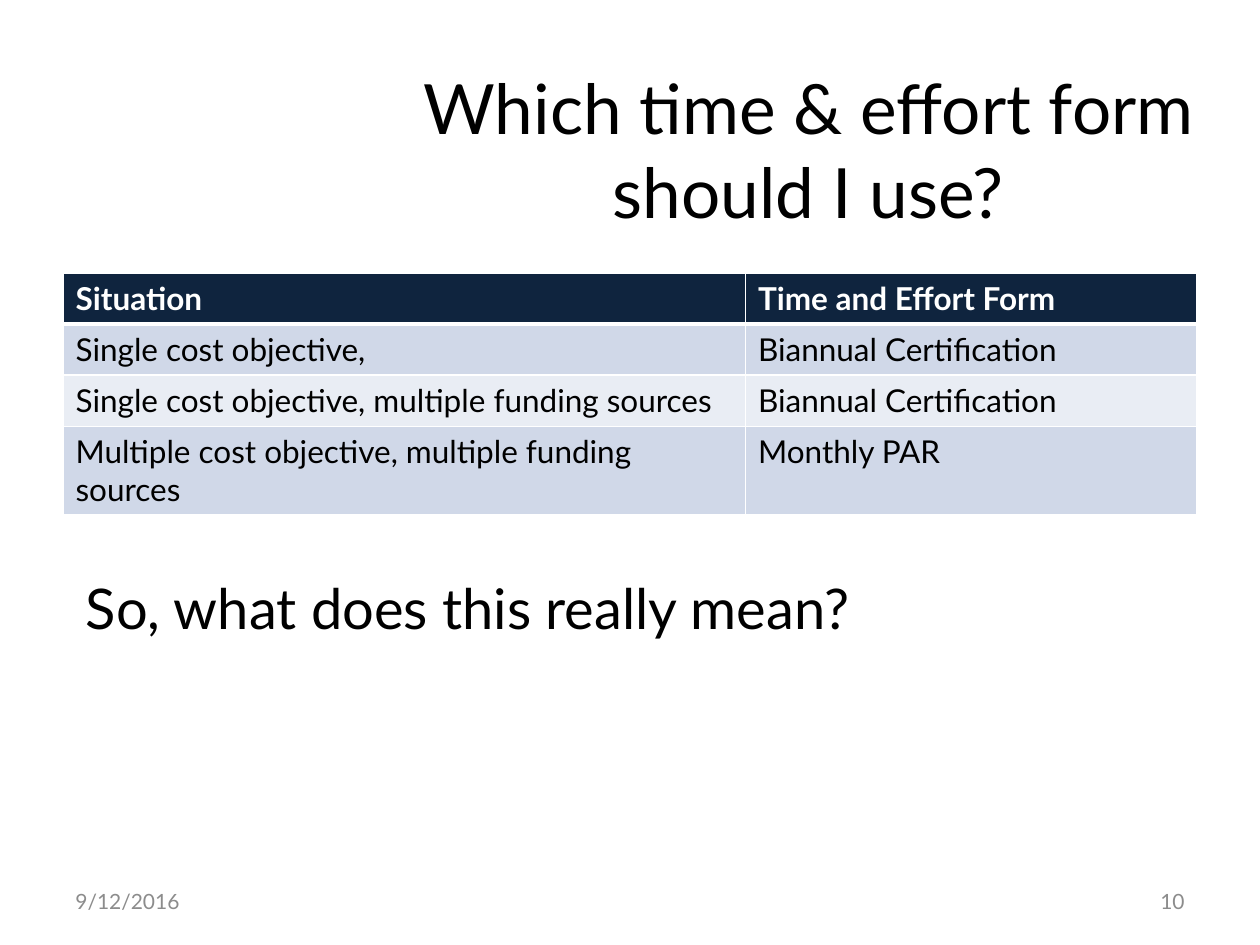
from lxml import etree
from pptx import Presentation
from pptx.dml.color import RGBColor
from pptx.enum import text
from pptx.oxml.ns import qn
from pptx.util import Pt

# Content
COLORS = {"black": "000000", "white": "FFFFFF", "gray": "8C8C8C",
          "header": "0F243E", "odd": "D0D8E8", "even": "E9EDF4"}
FONT = "Lato"
LEFT, CENTER, RIGHT = text.PP_ALIGN.LEFT, text.PP_ALIGN.CENTER, text.PP_ALIGN.RIGHT
TOP, MIDDLE = text.MSO_ANCHOR.TOP, text.MSO_ANCHOR.MIDDLE

# Wording, (left, top, width, height), size, color, alignment, anchor
TITLE = ("Which time & effort form should I use?",
         (222, 48, 480, 74), 39.6, "black", CENTER, MIDDLE)
DATE = ("9/12/2016", (36, 500.5, 168, 28.75), 12, "gray", LEFT, MIDDLE)
NUMBER = ("10", (516, 500.5, 168, 28.75), 12, "gray", RIGHT, MIDDLE)
QUESTION = ("So, what does this really mean?",
            (42, 324, 636, 46), 32, "black", LEFT, TOP)

FORMS = [
    ("Situation", "Time and Effort Form"),
    ("Single cost objective,", "Biannual Certification"),
    ("Single cost objective, multiple funding sources", "Biannual Certification"),
    ("Multiple cost objective, multiple funding sources", "Monthly PAR"),
]
TABLE_LEFT, TABLE_TOP, ROW_HEIGHT = 36, 156, 29.2
COLUMN_WIDTHS = (390, 258)


def write(paragraph, wording, size, color, bold=False):
    run = paragraph.add_run()
    run.text = wording
    for name, value in {"name": FONT, "size": Pt(size), "bold": bold}.items():
        setattr(run.font, name, value)
    run.font.color.rgb = RGBColor.from_string(COLORS[color])


def add_text(slide, wording, place, size, color, alignment, anchor):
    box = slide.shapes.add_textbox(*map(Pt, place))
    frame = box.text_frame
    frame.word_wrap = True
    frame.vertical_anchor = anchor
    paragraph = frame.paragraphs[0]
    paragraph.alignment = alignment
    write(paragraph, wording, size, color)


def add_borders(cell, widths):
    properties = cell._tc.get_or_add_tcPr()
    for side, width in widths.items():
        line = etree.SubElement(properties, qn(f"a:ln{side}"), w=str(Pt(width)))
        fill = etree.SubElement(line, qn("a:solidFill"))
        etree.SubElement(fill, qn("a:srgbClr"), val=COLORS["white"])


def add_forms_table(slide):
    table = slide.shapes.add_table(
        len(FORMS), len(COLUMN_WIDTHS), Pt(TABLE_LEFT), Pt(TABLE_TOP),
        Pt(sum(COLUMN_WIDTHS)), Pt(ROW_HEIGHT * len(FORMS))).table
    for column, width in zip(table.columns, COLUMN_WIDTHS):
        column.width = Pt(width)
    for r, row in enumerate(FORMS):
        table.rows[r].height = Pt(ROW_HEIGHT)
        is_header = r == 0
        band = "header" if is_header else "odd" if r % 2 else "even"
        # The rule under the header is heavier than the others
        borders = {"L": 1, "R": 1, "T": 3 if r == 1 else 1, "B": 3 if is_header else 1}
        for c, wording in enumerate(row):
            cell = table.cell(r, c)
            add_borders(cell, borders)
            cell.fill.solid()
            cell.fill.fore_color.rgb = RGBColor.from_string(COLORS[band])
            write(cell.text_frame.paragraphs[0], wording, 18,
                  "white" if is_header else "black", is_header)


def main():
    presentation = Presentation()
    presentation.slide_width, presentation.slide_height = Pt(720), Pt(540)
    slide = presentation.slides.add_slide(presentation.slide_layouts[6])

    # Title, table, footer, closing question
    add_text(slide, *TITLE)
    add_forms_table(slide)
    for part in (DATE, NUMBER, QUESTION):
        add_text(slide, *part)

    presentation.save("out.pptx")


if __name__ == "__main__":
    main()
